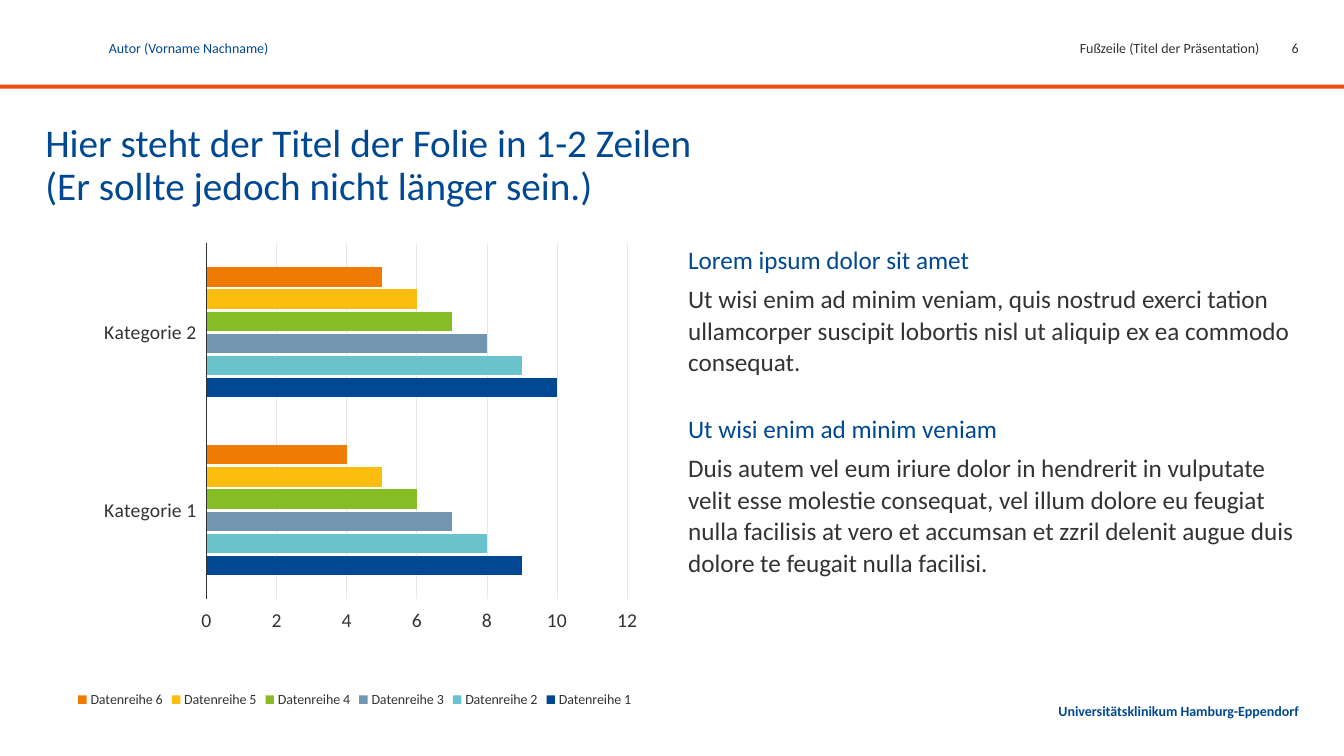
from dataclasses import dataclass

from lxml import etree
from pptx import Presentation
from pptx.chart.data import CategoryChartData
from pptx.dml.color import RGBColor
from pptx.enum.chart import (XL_CHART_TYPE as ChartType, XL_LEGEND_POSITION as LegendPosition,
                             XL_TICK_LABEL_POSITION as LabelPosition, XL_TICK_MARK as TickMark)
from pptx.enum.shapes import MSO_SHAPE as Shape
from pptx.enum.text import MSO_ANCHOR as Anchor, MSO_AUTO_SIZE as AutoSize, PP_ALIGN as Align
from pptx.oxml import parse_xml
from pptx.oxml.ns import nsdecls, qn
from pptx.util import Inches, Pt


@dataclass(frozen=True)
class Theme:
    font: str = "Calibri"
    blue: str = "004992"
    grey: str = "333333"
    grid: str = "E6E7E8"
    orange: str = "E84E0F"
    series: tuple = ("004992", "68C3CD", "7296AF", "87BD24", "FCBE0E", "EF7B05")
    title: int = 28
    body: int = 18
    axis: int = 14
    small: int = 10


THEME = Theme()
WIDTH, HEIGHT = Inches(13.34), Inches(7.5)

# Grid in percent of the slide's width and height
MARGIN, RIGHT_EDGE = 3.37, 96.63
TEXT_COLUMN, NUMBER_COLUMN = 51.2, 93.7
HEADER_ROW, CONTENT_ROW = 4.8, 32.13
LINE_HEIGHT, CONTENT_HEIGHT = 3.2, 62

SECTIONS = [
    ("Lorem ipsum dolor sit amet",
     "Ut wisi enim ad minim veniam, quis nostrud exerci tation ullamcorper suscipit "
     "lobortis nisl ut aliquip ex ea commodo consequat."),
    ("Ut wisi enim ad minim veniam",
     "Duis autem vel eum iriure dolor in hendrerit in vulputate velit esse molestie "
     "consequat, vel illum dolore eu feugiat nulla facilisis at vero et accumsan et zzril "
     "delenit augue duis dolore te feugait nulla facilisi."),
]


def area(left, top, right, height):
    """Turn grid percentages into left, top, width and height."""
    return (int(WIDTH * left / 100), int(HEIGHT * top / 100),
            int(WIDTH * (right - left) / 100), int(HEIGHT * height / 100))


def style_font(font, size, color, bold=False):
    font.name = THEME.font
    font.size = Pt(size)
    font.bold = bold
    font.color.rgb = RGBColor.from_string(color)


def add_run(paragraph, text, size, color, bold=False):
    run = paragraph.add_run()
    run.text = text
    style_font(run.font, size, color, bold)


def prepare_frame(shape, anchor=Anchor.TOP, top_inset=0):
    frame = shape.text_frame
    frame.word_wrap = True
    frame.auto_size = AutoSize.NONE
    frame.vertical_anchor = anchor
    frame.margin_left = frame.margin_right = frame.margin_bottom = 0
    frame.margin_top = Inches(top_inset)
    return frame


def move(shape, box):
    shape.left, shape.top, shape.width, shape.height = box


def add_label(slide, box, text, color, align=Align.RIGHT, bold=False,
              anchor=Anchor.TOP, top_inset=0.03):
    frame = prepare_frame(slide.shapes.add_textbox(*box), anchor, top_inset)
    paragraph = frame.paragraphs[0]
    paragraph.alignment = align
    add_run(paragraph, text, THEME.small, color, bold)
    return paragraph


def add_rule(slide):
    rule = slide.shapes.add_shape(Shape.RECTANGLE, *area(0, 11.2, 100, 0.53))
    rule.shadow.inherit = False
    rule.fill.solid()
    rule.fill.fore_color.rgb = RGBColor.from_string(THEME.orange)
    rule.line.fill.background()


def fill_title(title, lines):
    move(title, area(MARGIN, 16.4, RIGHT_EDGE, 10.53))
    paragraph = prepare_frame(title).paragraphs[0]
    paragraph.alignment = Align.LEFT
    paragraph.line_spacing = 0.9
    for index, line in enumerate(lines):
        if index:
            paragraph.add_line_break()
        add_run(paragraph, line, THEME.title, THEME.blue)


def fill_body(body, sections):
    move(body, area(TEXT_COLUMN, CONTENT_ROW, RIGHT_EDGE, CONTENT_HEIGHT))
    frame = prepare_frame(body)
    entries = [(level, text) for section in sections for level, text in enumerate(section)]
    for index, (level, text) in enumerate(entries):
        paragraph = frame.add_paragraph() if index else frame.paragraphs[0]
        paragraph.level = level
        paragraph.line_spacing = 1.05
        paragraph.space_before = Pt((20, 5)[level] if index else 0)
        paragraph.space_after = Pt((0, 5)[level])
        properties = paragraph._p.get_or_add_pPr()
        properties.set("marL", "0")
        properties.set("indent", "0")
        etree.SubElement(properties, qn("a:buNone"))
        add_run(paragraph, text, THEME.body, (THEME.blue, THEME.grey)[level])


def set_plot_layout(chart, **shares):
    """Fix the inner plot area as shares of the chart's size."""
    plot_area = chart._chartSpace.chart.plotArea
    for layout in plot_area.findall(qn("c:layout")):
        plot_area.remove(layout)
    values = "".join(f'<c:{name} val="{value}"/>' for name, value in shares.items())
    plot_area.insert(0, parse_xml(
        f'<c:layout {nsdecls("c")}><c:manualLayout><c:layoutTarget val="inner"/>'
        f'<c:xMode val="edge"/><c:yMode val="edge"/>{values}</c:manualLayout></c:layout>'))


def style_line(line, color):
    line.color.rgb = RGBColor.from_string(color)
    line.width = Pt(0.5)


def add_bar_chart(slide):
    data = CategoryChartData(number_format="General")
    data.categories = ["Kategorie 1", "Kategorie 2"]
    for index in range(len(THEME.series)):
        data.add_series(f"Datenreihe {index + 1}", (9 - index, 10 - index))
    box = area(4.35, CONTENT_ROW, 48.43, CONTENT_HEIGHT)
    chart = slide.shapes.add_chart(ChartType.BAR_CLUSTERED, *box, data).chart
    chart.has_title = False
    style_font(chart.font, THEME.body, THEME.grey)

    # Bars
    plot = chart.plots[0]
    plot.vary_by_categories = False
    plot.gap_width, plot.overlap = 250, -15
    for series, color in zip(plot.series, THEME.series):
        series.format.fill.solid()
        series.format.fill.fore_color.rgb = RGBColor.from_string(color)

    # Axes
    category_axis, value_axis = chart.category_axis, chart.value_axis
    for axis in (category_axis, value_axis):
        style_font(axis.tick_labels.font, THEME.axis, THEME.grey)
        axis.minor_tick_mark = TickMark.NONE
    category_axis.major_tick_mark = TickMark.NONE
    category_axis.tick_label_position = LabelPosition.LOW
    style_line(category_axis.format.line, THEME.grey)
    value_axis.minimum_scale, value_axis.maximum_scale, value_axis.major_unit = 0, 12, 2
    value_axis.major_tick_mark = TickMark.OUTSIDE
    value_axis.format.line.fill.background()
    value_axis.has_major_gridlines = True
    style_line(value_axis.major_gridlines.format.line, THEME.grid)

    # Legend
    chart.has_legend = True
    chart.legend.position = LegendPosition.BOTTOM
    chart.legend.include_in_layout = False
    style_font(chart.legend.font, THEME.small, THEME.grey)
    set_plot_layout(chart, x=0.25, y=0, w=0.71, h=0.76)


def main():
    presentation = Presentation()
    presentation.slide_width, presentation.slide_height = WIDTH, HEIGHT
    slide = presentation.slides.add_slide(presentation.slide_layouts[1])

    # Frame of the slide
    add_rule(slide)
    clinic = add_label(slide, area(73.01, 92, RIGHT_EDGE, LINE_HEIGHT),
                       "Universitätsklinikum Hamburg-Eppendorf", THEME.blue,
                       bold=True, anchor=Anchor.BOTTOM, top_inset=0)
    clinic.line_spacing, clinic.space_after = 1.05, Pt(2)

    # Title and text
    fill_title(slide.shapes.title, ["Hier steht der Titel der Folie in 1-2 Zeilen",
                                    "(Er sollte jedoch nicht länger sein.)"])
    fill_body(slide.placeholders[1], SECTIONS)

    # Header line
    add_label(slide, area(8.1, HEADER_ROW, 32.91, LINE_HEIGHT),
              "Autor (Vorname Nachname)", THEME.blue, align=Align.LEFT)
    add_label(slide, area(TEXT_COLUMN, HEADER_ROW, NUMBER_COLUMN, LINE_HEIGHT),
              "Fußzeile (Titel der Präsentation)", THEME.grey)
    add_label(slide, area(NUMBER_COLUMN, HEADER_ROW, RIGHT_EDGE, LINE_HEIGHT), "6", THEME.grey)

    add_bar_chart(slide)
    presentation.save("out.pptx")


if __name__ == "__main__":
    main()
